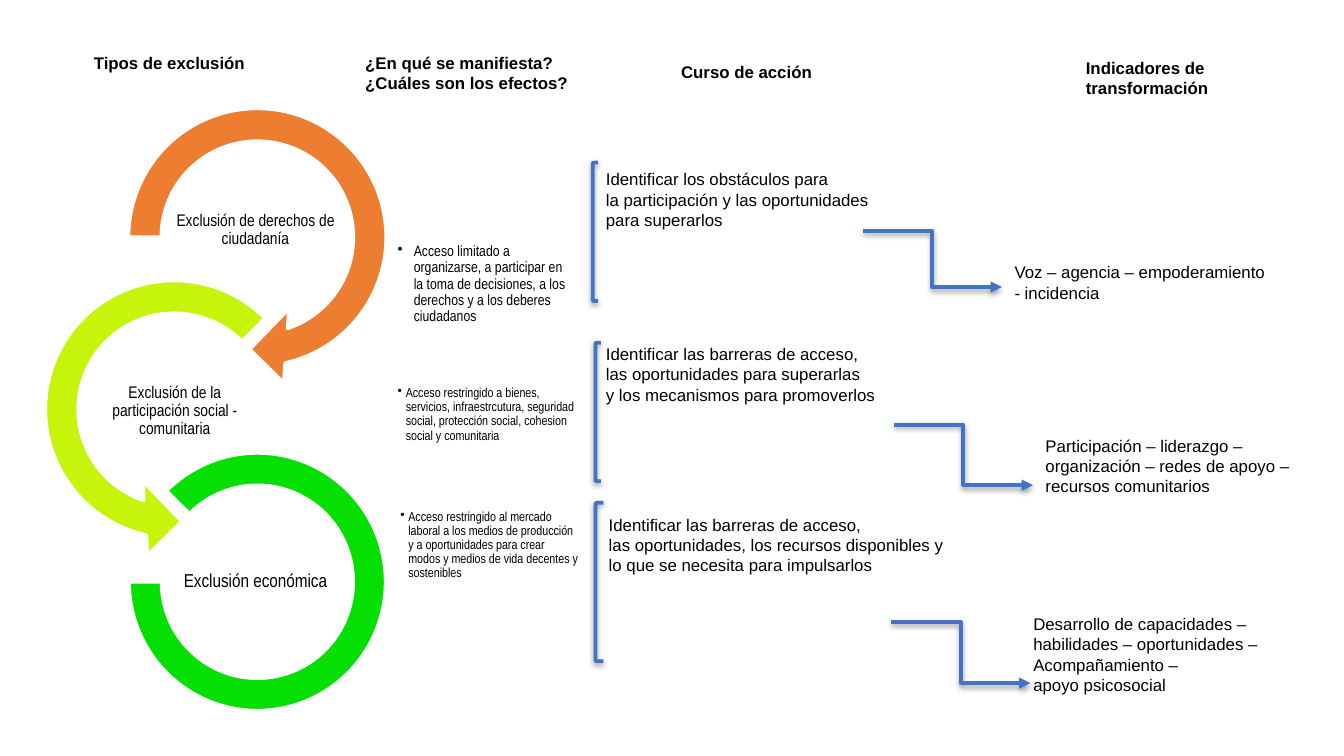
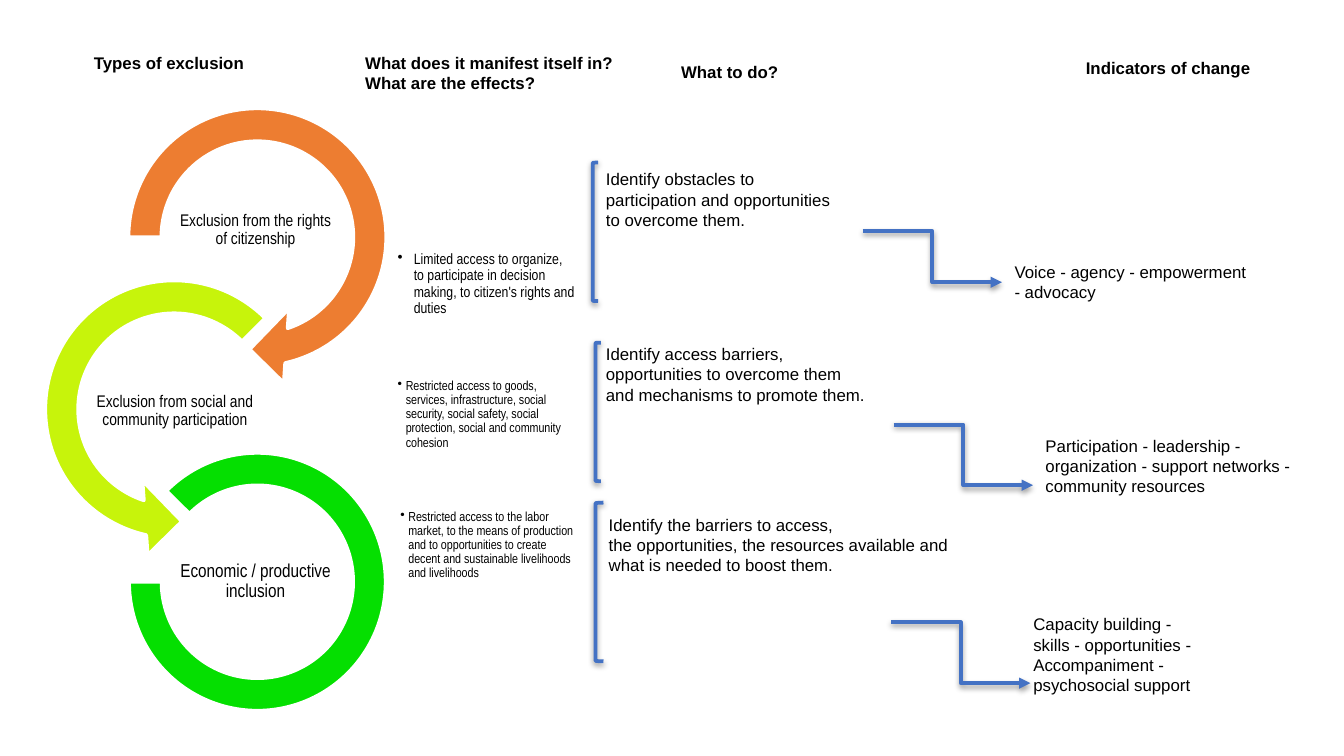
from lxml import etree
from pptx import Presentation
from pptx.dml.color import RGBColor
from pptx.enum.shapes import MSO_CONNECTOR, MSO_SHAPE
from pptx.enum.text import MSO_ANCHOR, MSO_AUTO_SIZE, PP_ALIGN
from pptx.oxml import parse_xml
from pptx.oxml.ns import nsdecls, qn
from pptx.util import Pt

ELBOW = MSO_CONNECTOR.ELBOW
BRACKET = MSO_SHAPE.LEFT_BRACKET
MIDDLE = MSO_ANCHOR.MIDDLE
CENTER = PP_ALIGN.CENTER
GROW = MSO_AUTO_SIZE.SHAPE_TO_FIT_TEXT
BLUE, WHITE, BLACK = "4472C4", "FFFFFF", "000000"

# Places shared by both slides, in points
RINGS = [
    (MSO_SHAPE.CIRCULAR_ARROW, (57.6, 46.8, 160.6, 160.6), "ED7D31",
     (0.11, 11.42, 45, 108, 0.125)),
    (MSO_SHAPE.LEFT_CIRCULAR_ARROW, (13, 139, 160.6, 160.6), "C7F40B",
     (0.11, 11.42, 63, 189, 0.125)),
    (MSO_SHAPE.BLOCK_ARC, (69.1, 242.6, 137.5, 138.2), "05DF01",
     (135, 108, 0.127)),
]
LABELS = [(92.2, 100.8, 9), (49, 198, 9), (92.2, 289.4, 10)]
EFFECTS = [(212.4, 120.2, 8, 8.6), (212.4, 190.1, 7, 4.3), (213.8, 259.9, 7, 4.3)]
GOALS = [(317.5, 87.1, 198.7), (317.5, 180.7, 219.6), (319, 272.2, 219.6)]
SIGNS = [(536.4, 136.8), (553, 229.7), (546.5, 325.4)]
HEADS = [(43.2, 24.5), (188.6, 24.5), (357.8, 29.5), (574.6, 27.4)]
BRACKETS = [(317.5, 87.1, 2.9, 74.2), (319, 183.6, 2.9, 74.2), (319, 269.3, 4.3, 85)]
ARROWS = [(462.2, 123.8), (478.8, 227.5), (477.4, 333.4)]
ARROW_W = 74.6

SLIDES = [
    {
        "labels": ["Exclusión de derechos de ciudadanía",
                   "Exclusión de la participación social - comunitaria",
                   "Exclusión económica"],
        "effects": [
            "Acceso limitado a organizarse, a participar en la toma de decisiones, "
            "a los derechos y a los deberes ciudadanos",
            "Acceso restringido a bienes, servicios, infraestrcutura, seguridad "
            "social, protección social, cohesion social y comunitaria",
            "Acceso restringido al mercado laboral a los medios de producción y a "
            "oportunidades para crear modos y medios de vida decentes y sostenibles"],
        "goals": [
            "Identificar los obstáculos para\nla participación y las oportunidades\n"
            "para superarlos",
            "Identificar las barreras de acceso,\nlas oportunidades para superarlas\n"
            "y los mecanismos para promoverlos",
            "Identificar las barreras de acceso,\nlas oportunidades, los recursos "
            "disponibles y\nlo que se necesita para impulsarlos"],
        "goal_h": 47.5,
        "signs": [
            ("Voz – agencia – empoderamiento\n- incidencia", 164.9, 34.6),
            ("Participación – liderazgo –\norganización – redes de apoyo –\n"
             "recursos comunitarios", 160.6, 47.5),
            ("Desarrollo de capacidades –\nhabilidades – oportunidades –\n"
             "Acompañamiento –\napoyo psicosocial", 149, 60.5)],
        "heads": [
            ("Tipos de exclusión", 103.7, 21.6),
            ("¿En qué se manifiesta?\n¿Cuáles son los efectos?", 133.9, 47.5),
            ("Curso de acción", 94.3, 34.6),
            ("Indicadores de\ntransformación", 118.8, 47.5)],
        "drops": [30, 32.4, 32.6],
    },
    {
        "labels": ["Exclusion from the rights of citizenship",
                   "Exclusion from social and community participation",
                   "Economic / productive inclusion"],
        "effects": [
            "Limited access to organize, to participate in decision making, "
            "to citizen's rights and duties",
            "Restricted access to goods, services, infrastructure, social security, "
            "social safety, social protection, social and community cohesion",
            "Restricted access to the labor market, to the means of production and to "
            "opportunities to create decent and sustainable livelihoods and livelihoods"],
        "goals": [
            "Identify obstacles to\nparticipation and opportunities\nto overcome them.",
            "Identify access barriers,\nopportunities to overcome them\n"
            "and mechanisms to promote them.",
            "Identify the barriers to access,\nthe opportunities, the resources "
            "available and\nwhat is needed to boost them."],
        "goal_h": 40.3,
        "signs": [
            ("Voice - agency - empowerment\n- advocacy", 142.6, 28.8),
            ("Participation - leadership -\norganization - support networks -\n"
             "community resources", 149, 40.3),
            ("Capacity building -\nskills - opportunities -\nAccompaniment -\n"
             "psychosocial support", 102.2, 51.1)],
        "heads": [
            ("Types of exclusion", 96.5, 18),
            ("What does it manifest itself in?\nWhat are the effects?", 148.3, 28.8),
            ("What to do?", 67, 28.8),
            ("Indicators of change", 118.8, 18)],
        "drops": [27.4, 32.4, 32.6],
    },
]


def write(text, x, y, w, h, size=9, font="Arial", bold=False, wrap=True,
          tight=False, align=None, hang=0):
    """Add a text box; tight boxes are centred upright, hang makes a bullet."""
    box = shapes.add_textbox(Pt(x), Pt(y), Pt(w), Pt(h))
    frame = box.text_frame
    frame.word_wrap = wrap
    frame.text = text
    if tight:
        frame.auto_size = MSO_AUTO_SIZE.NONE
        frame.vertical_anchor = MIDDLE
        frame.margin_left = frame.margin_right = Pt(0.7)
        frame.margin_top = frame.margin_bottom = Pt(0.7)
    else:
        frame.auto_size = GROW
    for para in frame.paragraphs:
        para.alignment = align
        if tight:
            para.line_spacing = 0.9
        if hang:
            para.level = 1
            props = para._p.get_or_add_pPr()
            props.set("marL", str(Pt(hang)))
            props.set("indent", str(-Pt(hang)))
            etree.SubElement(props, qn("a:buChar")).set("char", "•")
        for run in para.runs:
            run.font.size = Pt(size)
            run.font.name = font
            run.font.bold = bold
            run.font.color.rgb = RGBColor.from_string(BLACK)


def trace(item, arrow=False):
    """Give a bracket or connector its blue line and soft shadow."""
    item.line.color.rgb = RGBColor.from_string(BLUE)
    item.line.width = Pt(2)
    if arrow:
        etree.SubElement(item.line._get_or_add_ln(), qn("a:tailEnd")).set("type", "triangle")
    item._element.spPr.append(parse_xml(
        f'<a:effectLst {nsdecls("a")}><a:outerShdw blurRad="{Pt(3.1)}" '
        f'dist="{Pt(1.6)}" dir="5400000" rotWithShape="0"><a:srgbClr val="{BLACK}">'
        '<a:alpha val="38000"/></a:srgbClr></a:outerShdw></a:effectLst>'))


prs = Presentation()
prs.slide_width, prs.slide_height = Pt(720), Pt(405)

for data in SLIDES:
    slide = prs.slides.add_slide(prs.slide_layouts[6])
    shapes = slide.shapes.add_group_shape().shapes

    for kind, place, color, bends in RINGS:
        ring = shapes.add_shape(kind, *map(Pt, place))
        ring.shadow.inherit = False
        ring.fill.solid()
        ring.fill.fore_color.rgb = RGBColor.from_string(color)
        ring.line.color.rgb = RGBColor.from_string(WHITE)
        ring.line.width = Pt(2)
        for i, bend in enumerate(bends):
            ring.adjustments[i] = bend

    for text, (x, y, size) in zip(data["labels"], LABELS):
        write(text, x, y, 89.3, 44.6, size=size, font="Arial Narrow",
              tight=True, align=CENTER)
    for text, (x, y, size, hang) in zip(data["effects"], EFFECTS):
        write(text, x, y, 96.5, 64.1, size=size, font="Arial Narrow",
              tight=True, hang=hang)
    for text, (x, y, w) in zip(data["goals"], GOALS):
        write(text, x, y, w, data["goal_h"])
    for (text, w, h), (x, y) in zip(data["signs"], SIGNS):
        write(text, x, y, w, h, wrap=False)
    for (text, w, h), (x, y) in zip(data["heads"], HEADS):
        write(text, x, y, w, h, bold=True, wrap=x == HEADS[-1][0])

    for place in BRACKETS:
        mark = shapes.add_shape(BRACKET, *map(Pt, place))
        mark.fill.background()
        trace(mark)
    for (x, y), drop in zip(ARROWS, data["drops"]):
        step = shapes.add_connector(ELBOW, Pt(x), Pt(y), Pt(x + ARROW_W), Pt(y + drop))
        trace(step, arrow=True)

prs.save("out.pptx")
